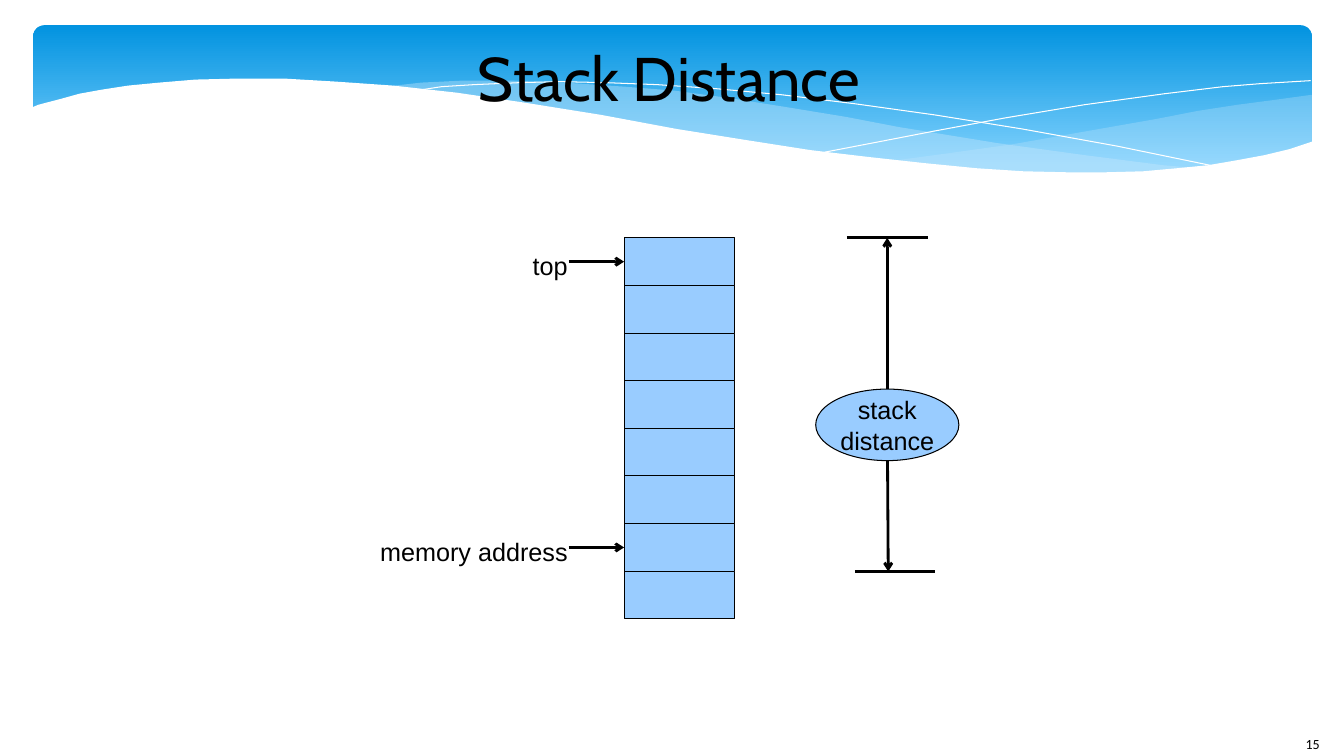
import dataclasses

import lxml.etree
import pptx
import pptx.dml.color
import pptx.enum.shapes
import pptx.enum.text
import pptx.oxml.ns
import pptx.util

Inches = pptx.util.Inches
RGB = pptx.dml.color.RGBColor
ALIGN = pptx.enum.text.PP_ALIGN
ANCHOR = pptx.enum.text.MSO_ANCHOR
SHAPE = pptx.enum.shapes.MSO_SHAPE


@dataclasses.dataclass(frozen=True)
class Theme:
    sky_top: RGB = RGB(0x02, 0x93, 0xE0)
    sky_bottom: RGB = RGB(0x83, 0xD3, 0xFE)
    haze: RGB = RGB(0xC6, 0xE7, 0xFC)
    white: RGB = RGB(0xFF, 0xFF, 0xFF)
    ink: RGB = RGB(0, 0, 0)
    block: RGB = RGB(0x99, 0xCC, 0xFF)
    title_font: str = "Cabin"
    label_font: str = "Arial"
    number_font: str = "Calibri"
    title_size: int = 44
    label_size: int = 18
    number_size: int = 10


T = Theme()

# Wave outlines, in inches from the banner's top left corner
HAZE_RIGHT = [(12.68, 0.69), (12.32, 0.74), (11.94, 0.79), (11.55, 0.85), (11.14, 0.93),
              (10.4, 1.06), (9.72, 1.18), (9.08, 1.27), (8.49, 1.35), (8.88, 1.39),
              (9.43, 1.43), (9.92, 1.46), (10.52, 1.47), (11.05, 1.45), (11.53, 1.41),
              (11.95, 1.35), (12.33, 1.27), (12.68, 1.17)]
HAZE_MIDDLE = [(11.57, 1.42), (11.21, 1.39), (10.43, 1.29), (9.56, 1.17), (8.58, 1.01),
               (8.06, 0.91), (7.45, 0.81), (6.88, 0.72), (6.36, 0.65), (5.86, 0.61),
               (5.27, 0.57), (4.73, 0.55), (4.26, 0.55), (3.85, 0.57), (3.49, 0.61),
               (3.98, 0.65), (4.5, 0.72), (5.06, 0.81), (5.66, 0.91), (6.73, 1.1),
               (7.69, 1.25), (8.34, 1.33), (8.93, 1.4), (9.48, 1.43), (9.97, 1.47),
               (10.57, 1.48), (11.1, 1.46)]
FALLING_LINE = [(3.79, 0.65), (4.05, 0.61), (4.37, 0.59), (4.83, 0.57), (5.22, 0.56),
                (5.67, 0.57), (6.19, 0.59), (6.77, 0.63), (7.42, 0.69), (8.15, 0.78),
                (8.94, 0.89), (9.81, 1.03), (10.75, 1.2), (11.77, 1.41)]
RISING_LINE = [(7.85, 1.26), (8.37, 1.16), (8.94, 1.05), (9.64, 0.92), (10.42, 0.79),
               (11.22, 0.68), (11.8, 0.61), (12.17, 0.58), (12.67, 0.55)]
WHITE_WAVE = [(12.7, 1.15), (12.46, 1.23), (12.21, 1.29), (11.94, 1.34), (11.65, 1.39),
              (11.34, 1.42), (11.01, 1.45), (10.64, 1.46), (10.25, 1.46), (9.82, 1.45),
              (9.36, 1.42), (8.85, 1.37), (8.3, 1.31), (7.71, 1.24), (7.07, 1.14),
              (6.38, 1.03), (5.63, 0.89), (4.88, 0.77), (4.2, 0.67), (3.57, 0.6),
              (3, 0.56), (2.49, 0.53), (2.02, 0.53), (1.61, 0.54), (1.25, 0.57),
              (0.94, 0.6), (0.68, 0.64), (0.46, 0.68), (0.28, 0.73), (0.05, 0.79),
              (-0.02, 0.82), (-0.02, 1.99), (12.7, 1.99)]


def style_runs(tf, font, size):
    for p in tf.paragraphs:
        for r in p.runs:
            r.font.name = font
            r.font.size = pptx.util.Pt(size)
            r.font.color.rgb = T.ink


def paint(sp, fill=None, line=None, alpha=None):
    sp.shadow.inherit = False
    if fill is None:
        sp.fill.background()
    else:
        sp.fill.solid()
        sp.fill.fore_color.rgb = fill
    if alpha is not None:
        clr = sp.element.spPr.find(".//" + pptx.oxml.ns.qn("a:srgbClr"))
        lxml.etree.SubElement(clr, pptx.oxml.ns.qn("a:alpha"), val=str(alpha * 1000))
    if line is None:
        sp.line.fill.background()
    else:
        sp.line.color.rgb = line
        sp.line.width = 0


def add_wave(s, x, y, points, closed=True, **paints):
    pts = [(Inches(x + dx), Inches(y + dy)) for dx, dy in points]
    fb = s.shapes.build_freeform(*pts[0])
    fb.add_line_segments(pts[1:], close=closed)
    paint(fb.convert_to_shape(), **paints)


def add_line(s, x1, y1, x2, y2, arrow=False):
    c = s.shapes.add_connector(pptx.enum.shapes.MSO_CONNECTOR.STRAIGHT,
                               Inches(x1), Inches(y1), Inches(x2), Inches(y2))
    c.line.color.rgb = T.ink
    c.line.width = 0
    if arrow:
        ln = c.line._get_or_add_ln()
        lxml.etree.SubElement(ln, pptx.oxml.ns.qn("a:tailEnd"), type="arrow")
    lxml.etree.SubElement(c.element.spPr, pptx.oxml.ns.qn("a:effectLst"))


def add_text(s, x, y, w, h, text, font, size, align=ALIGN.LEFT):
    tf = s.shapes.add_textbox(Inches(x), Inches(y), Inches(w), Inches(h)).text_frame
    tf.word_wrap = False
    tf.text = text
    tf.paragraphs[0].alignment = align
    style_runs(tf, font, size)


def add_banner(s, x, y, w, h):
    sp = s.shapes.add_shape(SHAPE.ROUNDED_RECTANGLE, Inches(x), Inches(y), Inches(w), Inches(h))
    sp.adjustments[0] = 0.071
    paint(sp)
    sp.fill.gradient()
    sp.fill.gradient_angle = 270
    for stop, pos, color in zip(sp.fill.gradient_stops, (0, 0.9), (T.sky_top, T.sky_bottom)):
        stop.position = pos
        stop.color.rgb = color
    add_wave(s, x, y, HAZE_RIGHT, fill=T.haze, alpha=29)
    add_wave(s, x, y, HAZE_MIDDLE, fill=T.haze, alpha=40)
    add_wave(s, x, y, FALLING_LINE, closed=False, line=T.white)
    add_wave(s, x, y, RISING_LINE, closed=False, line=T.white)
    add_wave(s, x, y, WHITE_WAVE, fill=T.white)


def add_title(s, x, y, w, h, text):
    title = s.shapes.title
    title.element.getparent().append(title.element)  # in front of the banner
    title.left, title.top, title.width, title.height = map(Inches, (x, y, w, h))
    tf = title.text_frame
    tf.text = text
    tf.margin_left = tf.margin_right = tf.margin_top = tf.margin_bottom = 0
    tf.vertical_anchor = ANCHOR.MIDDLE
    tf.auto_size = pptx.enum.text.MSO_AUTO_SIZE.NONE
    tf.paragraphs[0].alignment = ALIGN.CENTER
    style_runs(tf, T.title_font, T.title_size)


def add_stack(s, x, y, w, h, cells, labels):
    cell_h = h / cells
    for i in range(cells):
        sp = s.shapes.add_shape(SHAPE.RECTANGLE, Inches(x), Inches(y + i * cell_h),
                                Inches(w), Inches(cell_h))
        paint(sp, T.block, T.ink)
    # Labels pointing at cells
    for i, text, label_w in labels:
        mid = y + (i + 0.5) * cell_h
        add_text(s, x - 0.46 - label_w, mid - 0.16, label_w, 0.39, text,
                 T.label_font, T.label_size, ALIGN.RIGHT)
        add_line(s, x - 0.55, mid, x, mid, arrow=True)


def add_distance(s, x, y, w, h, text):
    mid, bubble_h = x + w / 2, 0.71
    bubble_y = y + 1.5
    # End bars and the arrows that reach them
    add_line(s, mid - 0.4, y, mid + 0.4, y)
    add_line(s, mid - 0.32, y + h, mid + 0.47, y + h)
    add_line(s, mid, bubble_y + 0.16, mid, y, arrow=True)
    add_line(s, mid, bubble_y + 0.31, mid + 0.01, y + h, arrow=True)
    # Bubble
    sp = s.shapes.add_shape(SHAPE.OVAL, Inches(x), Inches(bubble_y), Inches(w), Inches(bubble_h))
    paint(sp, T.block, T.ink)
    tf = sp.text_frame
    tf.word_wrap = False
    tf.vertical_anchor = ANCHOR.MIDDLE
    tf.text = text
    for p in tf.paragraphs:
        p.alignment = ALIGN.CENTER
    style_runs(tf, T.label_font, T.label_size)


def main():
    prs = pptx.Presentation()
    prs.slide_width, prs.slide_height = Inches(13.33), Inches(7.5)
    s = prs.slides.add_slide(prs.slide_layouts[5])
    add_banner(s, 0.33, 0.25, 12.68, 1.56)
    add_text(s, 12.85, 7.25, 0.82, 0.4, "15", T.number_font, T.number_size)
    add_title(s, 2.58, 0.25, 8.11, 1.02, "Stack Distance")
    add_stack(s, 6.19, 2.36, 1.1, 3.78, 8, [(0, "top", 0.55), (6, "memory address", 2.08)])
    add_distance(s, 8.09, 2.36, 1.42, 3.31, "stack\ndistance")
    prs.save("out.pptx")


if __name__ == "__main__":
    main()
